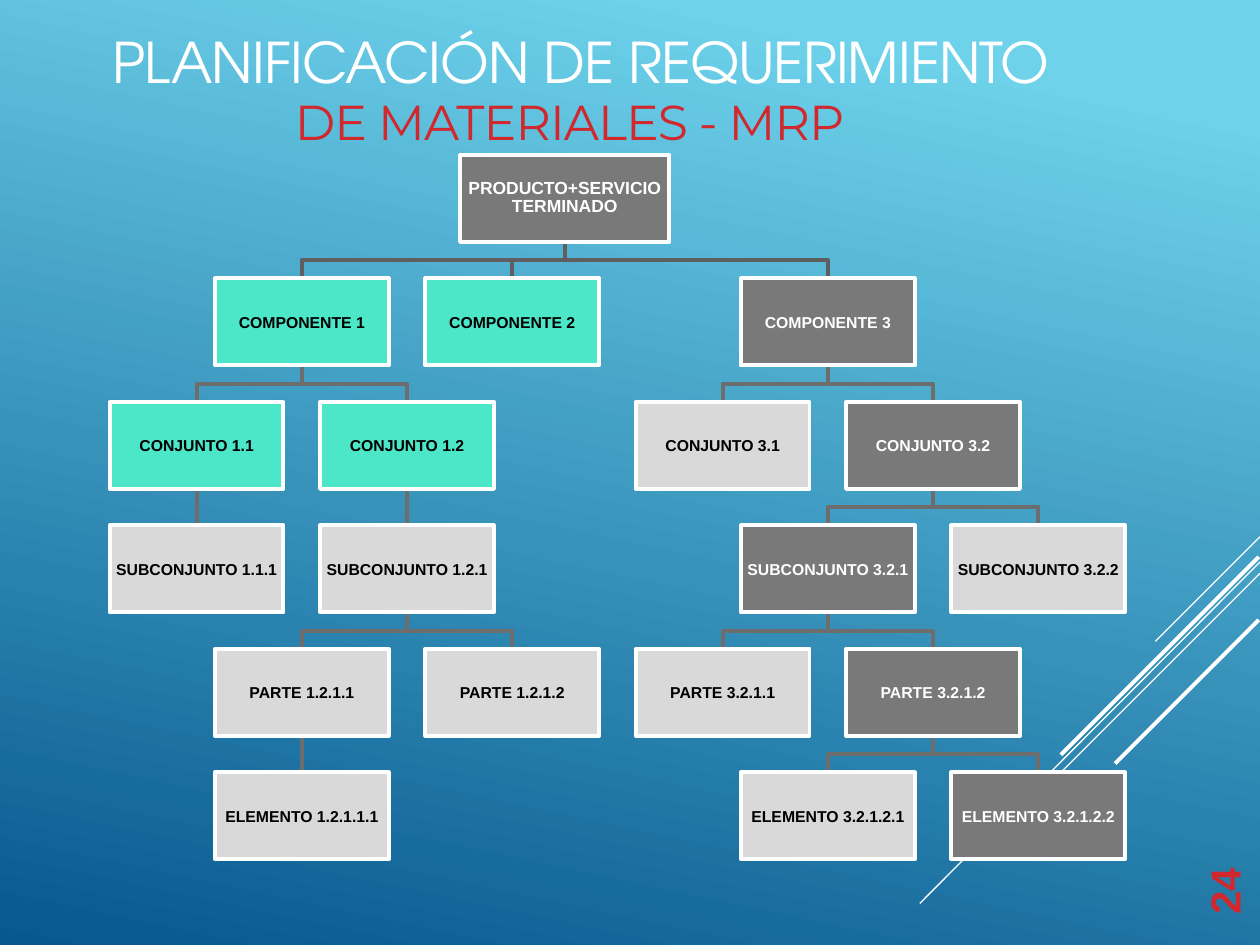
import pptx
import pptx.util
import pptx.dml.color
import pptx.enum.shapes
import pptx.enum.text
import pptx.oxml
import pptx.oxml.ns

Inches = pptx.util.Inches
Pt = pptx.util.Pt
ALIGN = pptx.enum.text.PP_ALIGN
ANCHOR = pptx.enum.text.MSO_ANCHOR

THEME = {
    "white": "FFFFFF", "black": "000000", "red": "D1282D",
    "sky": "6ED2EB", "navy": "06588E",
    "trunk": "5F5F5F", "branch": "6D6D6D",
    "title_font": "TeX Gyre Adventor", "subtitle_font": "Montserrat",
    "body_font": "Arial",
    "title_size": 32, "subtitle_size": 28, "number_size": 24,
    "root_size": 10, "node_size": 9,
    "thin": 0.75, "thick": 2.25,
}
NODE_STYLES = {
    "dark": ("797979", "white"),
    "green": ("4BE7C8", "black"),
    "light": ("D9D9D9", "black"),
}

TITLE = "PLANIFICACIÓN DE REQUERIMIENTO"
SUBTITLE = "DE MATERIALES - MRP"
PAGE_NUMBER = "24"

ROOT = "PRODUCTO+SERVICIO\vTERMINADO"
# label, parent, column, row, style
NODES = [
    (ROOT, None, 3.5, 0, "dark"),
    ("COMPONENTE 1", ROOT, 1, 1, "green"),
    ("COMPONENTE 2", ROOT, 3, 1, "green"),
    ("COMPONENTE 3", ROOT, 6, 1, "dark"),
    ("CONJUNTO 1.1", "COMPONENTE 1", 0, 2, "green"),
    ("CONJUNTO 1.2", "COMPONENTE 1", 2, 2, "green"),
    ("CONJUNTO 3.1", "COMPONENTE 3", 5, 2, "light"),
    ("CONJUNTO 3.2", "COMPONENTE 3", 7, 2, "dark"),
    ("SUBCONJUNTO 1.1.1", "CONJUNTO 1.1", 0, 3, "light"),
    ("SUBCONJUNTO 1.2.1", "CONJUNTO 1.2", 2, 3, "light"),
    ("SUBCONJUNTO 3.2.1", "CONJUNTO 3.2", 6, 3, "dark"),
    ("SUBCONJUNTO 3.2.2", "CONJUNTO 3.2", 8, 3, "light"),
    ("PARTE 1.2.1.1", "SUBCONJUNTO 1.2.1", 1, 4, "light"),
    ("PARTE 1.2.1.2", "SUBCONJUNTO 1.2.1", 3, 4, "light"),
    ("PARTE 3.2.1.1", "SUBCONJUNTO 3.2.1", 5, 4, "light"),
    ("PARTE 3.2.1.2", "SUBCONJUNTO 3.2.1", 7, 4, "dark"),
    ("ELEMENTO 1.2.1.1.1", "PARTE 1.2.1.1", 1, 5, "light"),
    ("ELEMENTO 3.2.1.2.1", "PARTE 3.2.1.2", 6, 5, "light"),
    ("ELEMENTO 3.2.1.2.2", "PARTE 3.2.1.2", 8, 5, "dark"),
]

RAYS = [
    (10, 4.26, 9.17, 5.09, "thin"),
    (10, 4.46, 7.3, 7.17, "thin"),
    (10, 4.55, 8.28, 6.27, "thin"),
    (9.99, 4.42, 8.42, 5.99, "thick"),
    (9.99, 4.92, 8.85, 6.06, "thick"),
]

FIRST_CENTER, COLUMN_STEP = 1.56, 6.68 / 8
FIRST_TOP, ROW_STEP = 1.23, 0.98
NODE_WIDTH, ROOT_WIDTH, NODE_HEIGHT = 1.38, 1.66, 0.69


def rgb(value):
    return pptx.dml.color.RGBColor.from_string(THEME.get(value, value))


def write(shape, text, font, size, color, align, anchor, spacing=0, bold=False):
    frame = shape.text_frame
    frame.text = text
    frame.auto_size = pptx.enum.text.MSO_AUTO_SIZE.NONE
    frame.word_wrap = False
    frame.vertical_anchor = anchor
    frame.margin_left = frame.margin_right = 0
    frame.margin_top = frame.margin_bottom = 0
    paragraph = frame.paragraphs[0]
    paragraph.alignment = align
    for run in paragraph.runs:
        run.font.name = THEME[font]
        run.font.size = Pt(THEME[size])
        run.font.bold = bold
        run.font.color.rgb = rgb(color)
        run.font._element.set("spc", str(round(spacing * 100)))
    return paragraph


def center_x(column):
    return FIRST_CENTER + column * COLUMN_STEP


def row_top(row):
    return FIRST_TOP + row * ROW_STEP


def draw_background(slide):
    fill = slide.background.fill
    fill.gradient()
    fill.gradient_angle = 258
    for stop, (position, color) in zip(fill.gradient_stops, [(0.1, "sky"), (1, "navy")]):
        stop.position = position
        stop.color.rgb = rgb(color)
    for x1, y1, x2, y2, weight in RAYS:
        ray = slide.shapes.add_connector(
            pptx.enum.shapes.MSO_CONNECTOR.STRAIGHT,
            Inches(x1), Inches(y1), Inches(x2), Inches(y2))
        ray.line.color.rgb = rgb("white")
        ray.line.width = Pt(THEME[weight])
        ray._element.spPr.append(pptx.oxml.parse_xml(
            "<a:effectLst %s/>" % pptx.oxml.ns.nsdecls("a")))


def draw_headings(slide):
    title = slide.shapes.title
    title.left, title.top, title.width, title.height = map(Inches, (0.89, 0.24, 7.73, 0.49))
    write(title, TITLE, "title_font", "title_size", "white", ALIGN.LEFT, ANCHOR.MIDDLE, -0.55)
    subtitle = slide.shapes.add_textbox(*map(Inches, (2.34, 0.73, 4.71, 0.49)))
    write(subtitle, SUBTITLE, "subtitle_font", "subtitle_size", "red", ALIGN.LEFT, ANCHOR.TOP, -0.5)
    number = slide.shapes.add_textbox(*map(Inches, (9.53, 6.86, 0.4, 0.4)))
    line = write(number, PAGE_NUMBER, "body_font", "number_size", "red",
                 ALIGN.LEFT, ANCHOR.TOP, bold=True)
    line.line_spacing = Pt(27.6)
    number.text_frame._txBody.bodyPr.set("vert", "vert270")


def draw_links(slide, links, color):
    builder = None
    for (start_column, start_row), (end_column, end_row) in links:
        x1, x2 = Inches(center_x(start_column)), Inches(center_x(end_column))
        y1, y2 = Inches(row_top(start_row) + NODE_HEIGHT), Inches(row_top(end_row))
        middle = (y1 + y2) // 2
        if builder is None:
            builder = slide.shapes.build_freeform(x1, y1)
        else:
            builder.move_to(x1, y1)
        builder.add_line_segments([(x1, middle), (x2, middle), (x2, y2)], close=False)
    tree = builder.convert_to_shape()
    tree.fill.background()
    tree.line.color.rgb = rgb(color)
    tree.line.width = Pt(THEME["thick"])
    tree.shadow.inherit = False


def draw_tree(slide):
    places = {label: (column, row) for label, _, column, row, _ in NODES}
    trunk = [(places[p], places[n]) for n, p, *_ in NODES if p == ROOT]
    branches = [(places[p], places[n]) for n, p, *_ in NODES if p not in (None, ROOT)]
    draw_links(slide, branches, "branch")
    draw_links(slide, trunk, "trunk")
    for label, parent, column, row, style in NODES:
        width = NODE_WIDTH if parent else ROOT_WIDTH
        node = slide.shapes.add_shape(
            pptx.enum.shapes.MSO_SHAPE.RECTANGLE,
            Inches(center_x(column) - width / 2), Inches(row_top(row)),
            Inches(width), Inches(NODE_HEIGHT))
        fill, color = NODE_STYLES[style]
        node.fill.solid()
        node.fill.fore_color.rgb = rgb(fill)
        node.line.color.rgb = rgb("white")
        node.line.width = Pt(THEME["thick"])
        node.shadow.inherit = False
        words = write(node, label, "body_font", "node_size" if parent else "root_size",
                      color, ALIGN.CENTER, ANCHOR.MIDDLE, bold=True)
        if not parent:
            words.line_spacing = Pt(10.3)


def main():
    deck = pptx.Presentation()
    deck.slide_width, deck.slide_height = Inches(10), Inches(7.5)
    slide = deck.slides.add_slide(deck.slide_layouts[5])
    draw_background(slide)
    draw_headings(slide)
    draw_tree(slide)
    deck.save("out.pptx")


if __name__ == "__main__":
    main()
